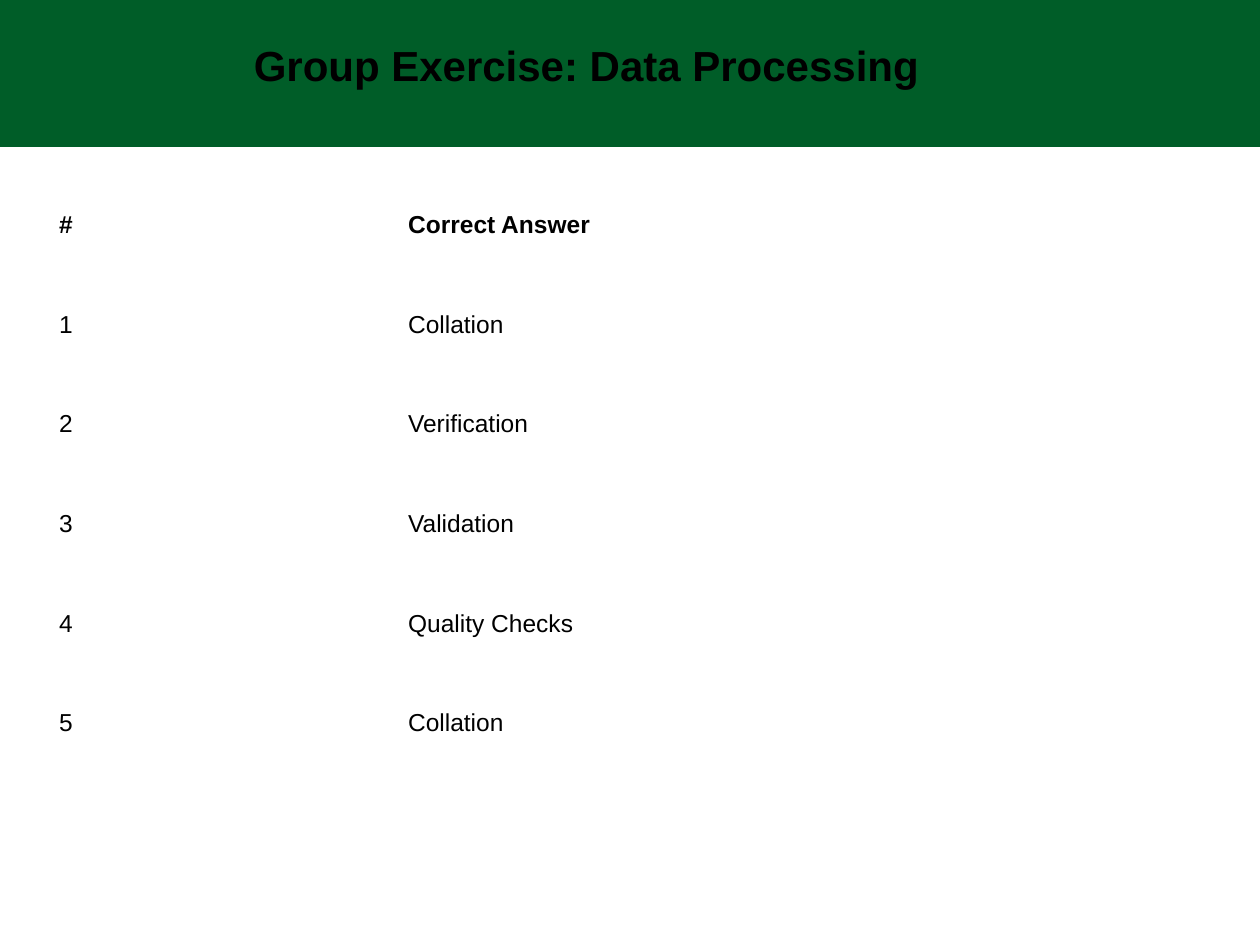
from pptx import Presentation
from pptx.dml.color import RGBColor
from pptx.enum.shapes import MSO_SHAPE
from pptx.enum.text import MSO_ANCHOR, MSO_AUTO_SIZE, PP_ALIGN
from pptx.util import Pt

GREEN = RGBColor(0x00, 0x5D, 0x28)
BLACK = RGBColor(0x00, 0x00, 0x00)

ANSWERS = ["Collation", "Verification", "Validation", "Quality Checks", "Collation"]
COLUMN_WIDTHS = [199.4, 453.6]
ROW_HEIGHT = 57


def write(tf, text, size=14, bold=False, color=BLACK):
    p = tf.paragraphs[0]
    p.alignment = PP_ALIGN.LEFT
    r = p.add_run()
    r.text = text
    r.font.name = "Arial"
    r.font.size = Pt(size)
    r.font.bold = bold
    r.font.color.rgb = color


def add_band(s):
    sp = s.shapes.add_shape(MSO_SHAPE.RECTANGLE, Pt(0), Pt(0), Pt(720), Pt(84))
    sp.shadow.inherit = False
    sp.fill.solid()
    sp.fill.fore_color.rgb = GREEN
    sp.line.fill.background()
    # Behind the title
    s.shapes._spTree.insert(2, sp._element)


def set_title(s, text):
    sp = s.shapes.title
    sp.left, sp.top, sp.width, sp.height = Pt(11.5), Pt(18), Pt(564), Pt(58)
    tf = sp.text_frame
    tf.word_wrap = True
    tf.auto_size = MSO_AUTO_SIZE.NONE
    tf.vertical_anchor = MSO_ANCHOR.MIDDLE
    tf.margin_left, tf.margin_bottom = Pt(133.5), Pt(24)
    write(tf, text, size=24, bold=True)


def add_answer_table(s, rows):
    frame = s.shapes.add_table(len(rows), len(COLUMN_WIDTHS), Pt(26.6), Pt(100),
                               Pt(sum(COLUMN_WIDTHS)), Pt(ROW_HEIGHT * len(rows)))
    table = frame.table
    table.first_row = False
    table.horz_banding = False
    for column, width in zip(table.columns, COLUMN_WIDTHS):
        column.width = Pt(width)
    for i, values in enumerate(rows):
        table.rows[i].height = Pt(ROW_HEIGHT)
        for j, text in enumerate(values):
            cell = table.cell(i, j)
            cell.fill.background()
            cell.vertical_anchor = MSO_ANCHOR.MIDDLE
            write(cell.text_frame, text, bold=(i == 0))


def main():
    prs = Presentation()
    prs.slide_width, prs.slide_height = Pt(720), Pt(540)
    s = prs.slides.add_slide(prs.slide_layouts[5])

    # Header
    add_band(s)
    set_title(s, "Group Exercise: Data Processing")

    # Numbered answers
    numbered = [(str(n), answer) for n, answer in enumerate(ANSWERS, 1)]
    add_answer_table(s, [("#", "Correct Answer")] + numbered)

    prs.save("out.pptx")


if __name__ == "__main__":
    main()
